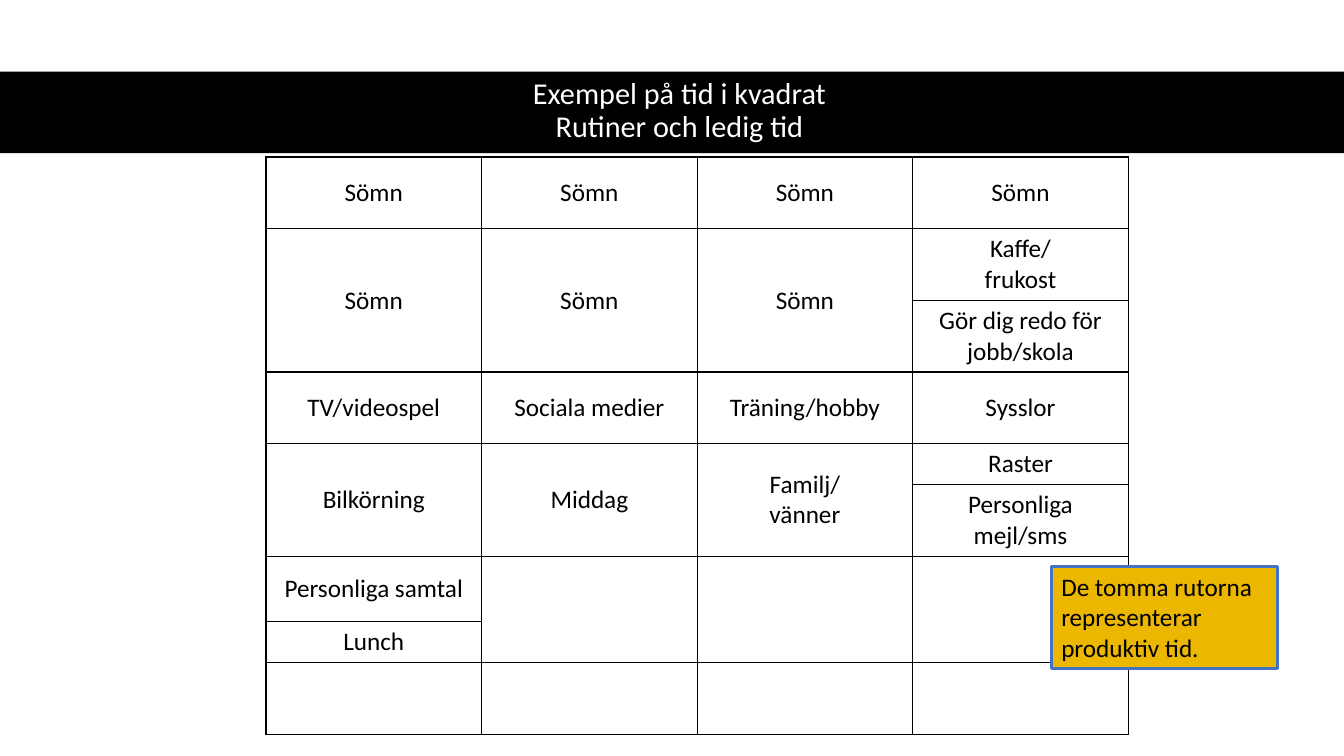
"""Build a slide with a time-square table of routines and free time."""
from lxml import etree
from pptx import Presentation
from pptx.dml.color import RGBColor
from pptx.enum import shapes, text
from pptx.oxml import ns
from pptx.util import Pt

COLORS = {"black": "000000", "white": "FFFFFF", "gold": "EBB700", "blue": "4472C4"}
FONT = "Calibri"
COLUMN_WIDTH = 154
ROW_HEIGHTS = [51.2, 46.8, 46.8, 51.2, 26.6, 46.8, 46.8, 26.6, 51.2]
ROUTINES = [
    ["Sömn", "Sömn", "Sömn", "Sömn"],
    ["Sömn", "Sömn", "Sömn", "Kaffe/\nfrukost"],
    ["", "", "", "Gör dig redo för jobb/skola"],
    ["TV/videospel", "Sociala medier", "Träning/hobby", "Sysslor"],
    ["Bilkörning", "Middag", "Familj/\nvänner", "Raster"],
    ["", "", "", "Personliga mejl/sms"],
    ["Personliga samtal", "", "", ""],
    ["Lunch", "", "", ""],
    ["", "", "", ""],
]
TALL_CELLS = {1: (0, 1, 2), 4: (0, 1, 2), 6: (1, 2, 3)}


def color(name):
    return RGBColor.from_string(COLORS[name])


def write(para, words, size, ink, align):
    para.alignment = align
    for index, line in enumerate(words.split("\n")):
        if index:
            para.add_line_break()
        span = para.add_run()
        span.text = line
        span.font.name = FONT
        span.font.size = Pt(size)
        span.font.color.rgb = color(ink)


def make_line(tag, width):
    line = etree.Element(ns.qn(tag), w=str(Pt(width)))
    fill = etree.SubElement(line, ns.qn("a:solidFill"))
    etree.SubElement(fill, ns.qn("a:srgbClr"), val=COLORS["black"])
    return line


def add_box(page, left, top, width, height, fill):
    box = page.shapes.add_shape(
        shapes.MSO_SHAPE.RECTANGLE, Pt(left), Pt(top), Pt(width), Pt(height))
    box.shadow.inherit = False
    box.fill.solid()
    box.fill.fore_color.rgb = color(fill)
    box.line.fill.background()
    return box


def set_title(page, words):
    title = page.shapes.title
    title.left, title.top, title.width, title.height = Pt(44), Pt(50.4), Pt(882.7), Pt(58.3)
    frame = title.text_frame
    frame.auto_size = text.MSO_AUTO_SIZE.NONE
    frame.word_wrap = True
    frame.vertical_anchor = text.MSO_ANCHOR.MIDDLE
    para = frame.paragraphs[0]
    para.line_spacing = 0.9
    write(para, words, 21.6, "white", text.PP_ALIGN.CENTER)


def style_cell(cell, words):
    cell.vertical_anchor = text.MSO_ANCHOR.MIDDLE
    properties = cell._tc.get_or_add_tcPr()
    for side in ("a:lnL", "a:lnR", "a:lnT", "a:lnB"):
        properties.append(make_line(side, 1))
    cell.fill.background()
    if words:
        write(cell.text_frame.paragraphs[0], words, 18, "black", text.PP_ALIGN.CENTER)


def add_routine_table(page):
    columns = len(ROUTINES[0])
    table = page.shapes.add_table(
        len(ROUTINES), columns, Pt(190), Pt(112.2),
        Pt(columns * COLUMN_WIDTH), Pt(sum(ROW_HEIGHTS))).table
    table.first_row = table.horz_banding = False
    for column in table.columns:
        column.width = Pt(COLUMN_WIDTH)
    for row, height in zip(table.rows, ROW_HEIGHTS):
        row.height = Pt(height)
    for r, routines in enumerate(ROUTINES):
        for c, words in enumerate(routines):
            style_cell(table.cell(r, c), words)
    for r, merged_columns in TALL_CELLS.items():
        for c in merged_columns:
            table.cell(r, c).merge(table.cell(r + 1, c))


def add_callout(page, words):
    box = add_box(page, 751, 404.7, 161.3, 72.7, "gold")
    box.line.color.rgb = color("blue")
    box.line.width = Pt(2.25)
    frame = box.text_frame
    frame.word_wrap = True
    frame.auto_size = text.MSO_AUTO_SIZE.SHAPE_TO_FIT_TEXT
    frame.vertical_anchor = text.MSO_ANCHOR.TOP
    para = frame.paragraphs[0]
    write(para, words, 18, "black", text.PP_ALIGN.LEFT)
    for span in para.runs:
        span._r.get_or_add_rPr().insert(0, make_line("a:ln", 0.75))


def main():
    deck = Presentation()
    deck.slide_width, deck.slide_height = Pt(960), Pt(540)
    page = deck.slides.add_slide(deck.slide_layouts[5])
    banner = add_box(page, 0, 51.1, 960, 58.3, "black")
    page.shapes.title._element.addprevious(banner._element)
    set_title(page, "Exempel på tid i kvadrat\nRutiner och ledig tid")
    add_routine_table(page)
    add_callout(page, "De tomma rutorna representerar produktiv tid.")
    deck.save("out.pptx")


if __name__ == "__main__":
    main()
